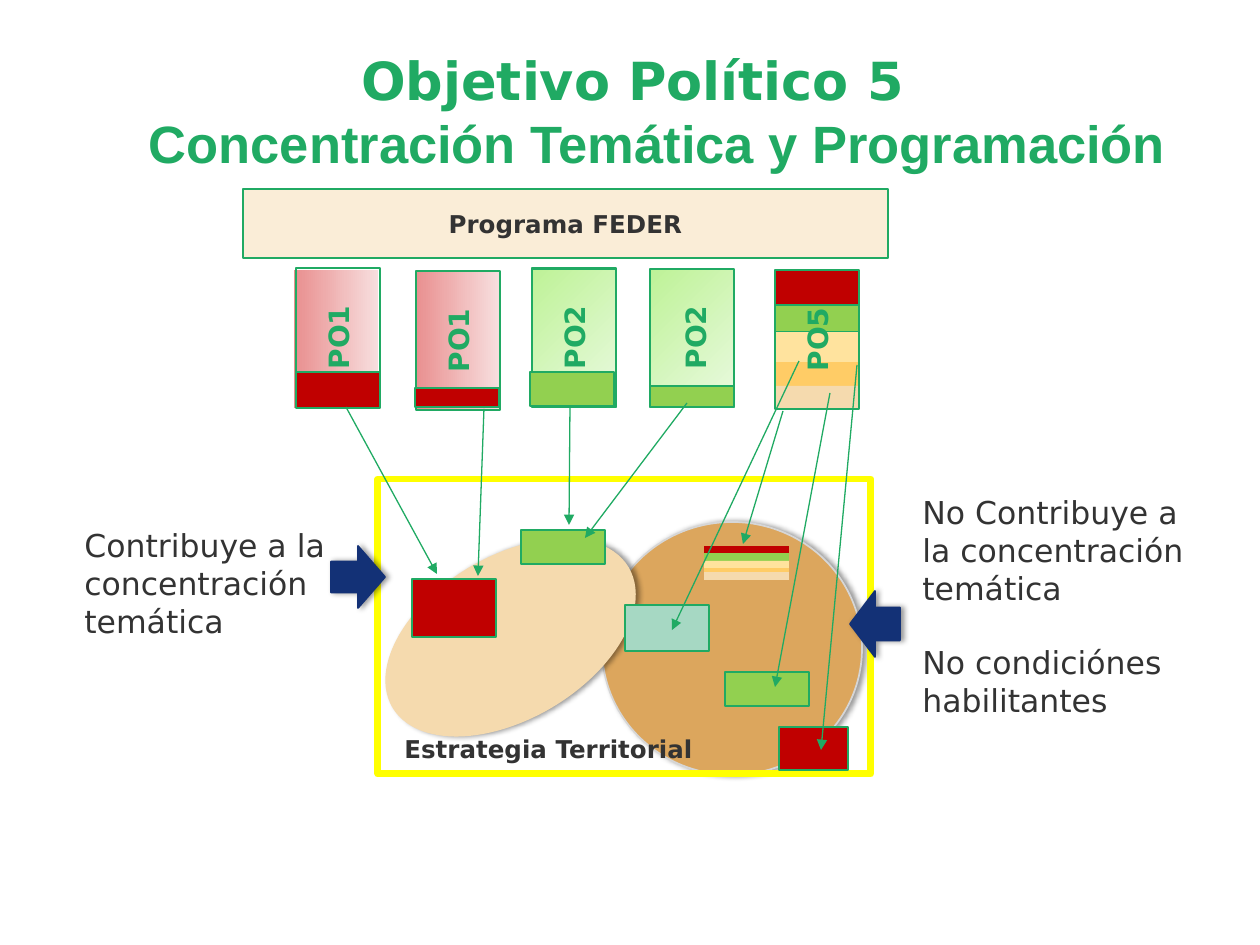
from lxml import etree
from pptx import Presentation
from pptx.dml.color import RGBColor
from pptx.enum.shapes import MSO_CONNECTOR as Connector, MSO_SHAPE as Shape
from pptx.enum.text import MSO_ANCHOR as Anchor, PP_ALIGN as Align
from pptx.oxml import parse_xml
from pptx.oxml.ns import nsdecls, qn
from pptx.util import Emu, Pt

COLORS = {
    "green": "20AA63", "text": "333333", "red": "C00000", "lime": "92D050",
    "amber": "FFCC66", "yellow": "FFE39E", "sand": "F5DAAE", "cream": "FAEDD7",
    "brown": "DCA65D", "gray": "D6D6D6", "mint": "A6D8C3", "navy": "133176",
    "frame": "FFFF00", "rose": "E98F8F", "pale_rose": "F7DEDE",
    "leaf": "BEF297", "pale_leaf": "EAFAE0",
}
SHADOW = (
    f'<a:effectLst {nsdecls("a")}><a:outerShdw blurRad="39370" dist="22860" dir="0">'
    '<a:srgbClr val="000000"><a:alpha val="40000"/></a:srgbClr></a:outerShdw></a:effectLst>'
)


def px(value):
    return Emu(round(value * 914400 / 126))


def rgb(name):
    return RGBColor.from_string(COLORS[name])


class TerritorialSlide:
    """Draws the programming diagram with one shared style."""

    font = "DejaVu Sans"

    def __init__(self, presentation):
        self.slide = presentation.slides.add_slide(presentation.slide_layouts[6])

    def style(self, font, size, color, bold):
        font.name, font.size, font.bold = self.font, Pt(size), bold
        font.color.rgb = rgb(color)

    def block(self, box, fill=None, line=None, width=0.75, kind=Shape.RECTANGLE,
              gradient=None, angle=0, rotation=0, shadow=False):
        shape = self.slide.shapes.add_shape(kind, *map(px, box))
        shape.rotation = rotation
        shape.shadow.inherit = False
        if shadow:
            properties = shape._element.spPr
            properties.replace(properties.find(qn("a:effectLst")), parse_xml(SHADOW))
        if gradient:
            shape.fill.gradient()
            shape.fill.gradient_angle = angle
            for stop, color in zip(shape.fill.gradient_stops, gradient):
                stop.color.rgb = rgb(color)
        elif fill:
            shape.fill.solid()
            shape.fill.fore_color.rgb = rgb(fill)
        else:
            shape.fill.background()
        if line:
            shape.line.color.rgb = rgb(line)
            shape.line.width = Pt(width)
        else:
            shape.line.fill.background()
        return shape

    def label(self, shape, text, size, color, vertical=False):
        frame = shape.text_frame
        frame.word_wrap = False
        frame.vertical_anchor = Anchor.MIDDLE
        if vertical:
            frame._txBody.bodyPr.set("vert", "vert270")
        paragraph = frame.paragraphs[0]
        paragraph.text = text
        paragraph.alignment = Align.CENTER
        self.style(paragraph.font, size, color, True)

    def text(self, box, paragraphs, size, bold=False):
        frame = self.slide.shapes.add_textbox(*map(px, box)).text_frame
        frame.word_wrap = True
        for index, content in enumerate(paragraphs):
            paragraph = frame.add_paragraph() if index else frame.paragraphs[0]
            paragraph.text = content
            if index:
                paragraph.space_before = Pt(21)
            self.style(paragraph.font, size, "text", bold)

    def title(self, box, first, second):
        frame = self.slide.shapes.add_textbox(*map(px, box)).text_frame
        frame.word_wrap = True
        paragraph = frame.paragraphs[0]
        paragraph.alignment = Align.CENTER
        properties = paragraph._p.get_or_add_pPr()
        properties.set("marL", str(px(49)))
        properties.set("indent", str(-px(49)))
        self.style(paragraph.font, 30, "green", True)
        paragraph.add_run().text = first
        paragraph.add_line_break()
        run = paragraph.add_run()
        run.text = second
        run.font.name = "Arial"

    def stripes(self, left, width, rows, outlined=None):
        for color, top, height in rows:
            self.block((left, top, width, height), color,
                       "green" if color == outlined else None)

    def arrow(self, *ends):
        connector = self.slide.shapes.add_connector(Connector.STRAIGHT, *map(px, ends))
        connector.line.color.rgb = rgb("green")
        connector.line.width = Pt(0.75)
        line = connector.line._get_or_add_ln()
        etree.SubElement(line, qn("a:tailEnd"), type="triangle")
        etree.SubElement(connector._element.spPr, qn("a:effectLst"))


def main():
    presentation = Presentation()
    presentation.slide_width, presentation.slide_height = px(1260), px(945)
    page = TerritorialSlide(presentation)

    page.block((602, 522, 260, 253), "brown", "gray", 1, Shape.OVAL, shadow=True)
    page.block((430, 501, 161, 273), "sand", "sand", 1, Shape.OVAL, rotation=59.3, shadow=True)
    page.title((66, 42, 1134, 129), "Objetivo Político 5",
               "Concentración Temática y Programación")
    page.stripes(704, 85, [("red", 546, 8), ("lime", 553, 8), ("amber", 564, 8),
                           ("yellow", 561, 7), ("sand", 572, 8)])
    page.block((378, 479, 493, 295), line="frame", width=4)
    program = page.block((243, 189, 645, 69), "cream", "green")
    page.label(program, "Programa FEDER", 14, "text")

    for box, color in [((521, 530, 84, 34), "lime"), ((625, 605, 84, 46), "mint"),
                       ((412, 579, 84, 58), "red"), ((779, 727, 69, 43), "red"),
                       ((725, 672, 84, 34), "lime")]:
        page.block(box, color, "green")
    page.text((392, 728, 508, 43), ["Estrategia Territorial"], 14, True)

    styles = {"PO1": (("rose", "pale_rose"), 0, None, "red"),
              "PO2": (("leaf", "pale_leaf"), 315, "green", "lime")}
    columns = [("PO1", 294, 270, 296, 268, "green", 296, 372, 36),
               ("PO1", 415, 271, 416, 271, "green", 415, 388, 19),
               ("PO2", 532, 269, 532, 268, "green", 530, 372, 34),
               ("PO2", 650, 269, 653, 268, None, 650, 386, 21)]
    for name, left, top, label_left, label_top, outline, base_left, base_top, base in columns:
        gradient, angle, edge, color = styles[name]
        page.block((left, top, 84, 138), line=edge, gradient=gradient, angle=angle)
        label = page.block((label_left, label_top, 84, 139), line=outline)
        page.label(label, name, 16, "green", vertical=True)
        page.block((base_left, base_top, 84, base), color, "green")

    page.stripes(775, 84, [("red", 271, 34), ("lime", 305, 27), ("amber", 362, 24),
                           ("yellow", 332, 30), ("sand", 386, 22)], outlined="lime")
    label = page.block((775, 270, 84, 139), line="green", width=1.5)
    page.label(label, "PO5", 16, "green", vertical=True)

    for ends in [(346, 407, 437, 574), (484, 409, 478, 576), (570, 407, 569, 525),
                 (687, 403, 585, 538), (783, 411, 743, 544), (799, 361, 672, 630),
                 (857, 365, 821, 750), (830, 393, 775, 687)]:
        page.arrow(*ends)

    page.text((72, 520, 271, 127), ["Contribuye a la concentración temática"], 18)
    page.text((910, 487, 297, 280), ["No Contribuye a la concentración temática",
                                     "No condiciónes habilitantes"], 18)
    for box, kind in [((331, 546, 54, 62), Shape.RIGHT_ARROW),
                      ((850, 591, 50, 66), Shape.LEFT_ARROW)]:
        page.block(box, "navy", "navy", 1, kind, shadow=True)

    presentation.save("out.pptx")


if __name__ == "__main__":
    main()
